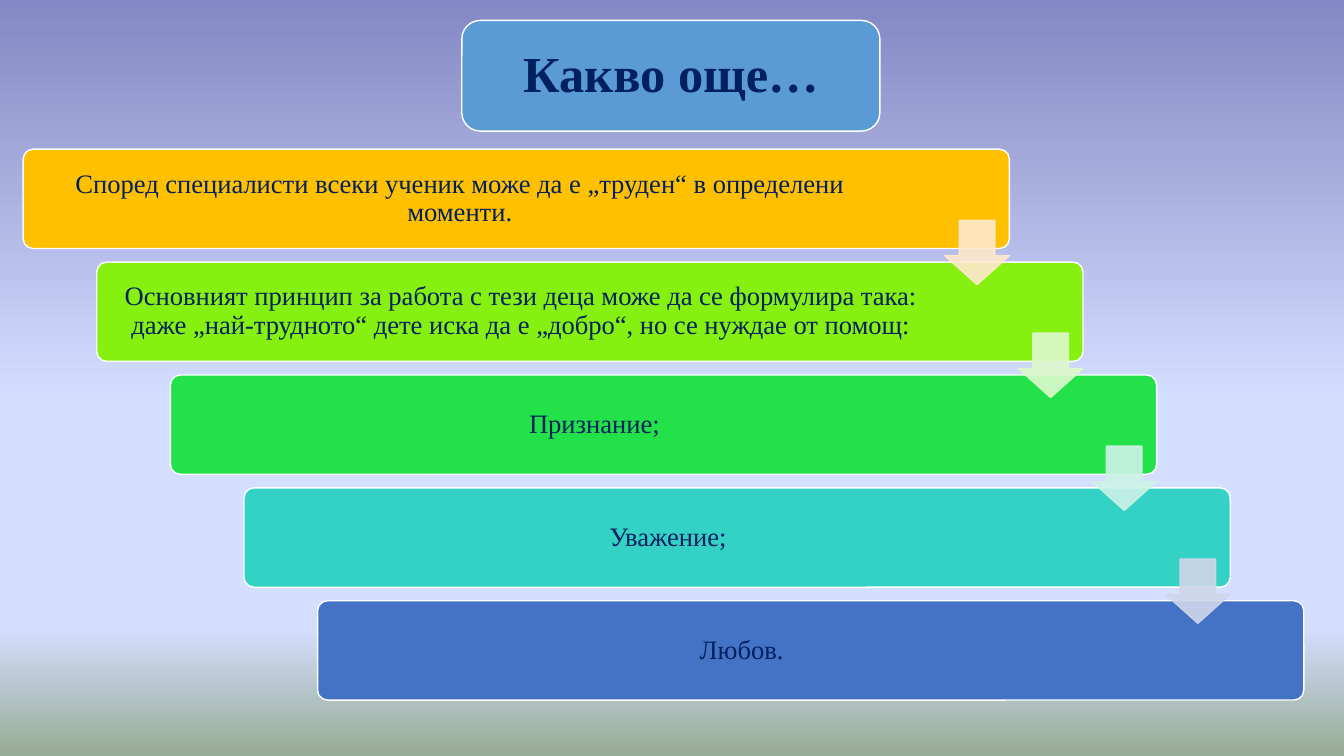
from copy import deepcopy
from dataclasses import dataclass

from lxml.etree import SubElement
from pptx import Presentation
from pptx.dml.color import RGBColor as RGB
from pptx.enum.shapes import MSO_SHAPE as Shape
from pptx.enum.text import MSO_ANCHOR as Anchor, PP_ALIGN as Align
from pptx.oxml.ns import qn
from pptx.util import Inches, Pt


@dataclass(frozen=True)
class Theme:
    font: str = "Times New Roman"
    ink: str = "002060"
    outline: str = "FFFFFF"
    title_fill: str = "5B9BD5"
    title_size: int = 36
    body_size: int = 19
    bars: tuple = ("FFC000", "86F011", "23E148", "33D2C5", "4472C4")
    arrows: tuple = ("FFE8CC", "DDF9CC", "CDF2E7", "CFD6EA")
    arrow_alpha: int = 90
    sky: tuple = ((0, "8488C4"), (53, "D4DEFF"), (83, "D4DEFF"), (100, "96AB94"))


class StairSlide:
    """Grid whose cell is one stair step; the origin is the first bar."""
    LEFT, TOP = 0.23, 1.48
    COL, ROW = 0.73, 1.12

    def __init__(self, slide, theme):
        self.slide, self.theme = slide, theme

    def background(self):
        fill = self.slide.background.fill
        fill.gradient()
        fill.gradient_angle = 270
        stops = fill.gradient_stops
        first = stops[0]._gs
        stop_list = first.getparent()
        for _ in range(len(self.theme.sky) - len(stops)):
            stop_list.append(deepcopy(first))
        for stop, (pos, color) in zip(fill.gradient_stops, self.theme.sky):
            stop.color.rgb = RGB.from_string(color)
            stop.position = pos / 100

    def shape(self, kind, col, row, cols, rows, fill, line, adj=()):
        sp = self.slide.shapes.add_shape(
            kind,
            Inches(self.LEFT + col * self.COL), Inches(self.TOP + row * self.ROW),
            Inches(cols * self.COL), Inches(rows * self.ROW))
        sp.shadow.inherit = False
        sp.fill.solid()
        sp.fill.fore_color.rgb = RGB.from_string(fill)
        sp.line.color.rgb = RGB.from_string(line)
        sp.line.width = Pt(1)
        for i, value in enumerate(adj):
            sp.adjustments[i] = value
        return sp

    def box(self, text, col, row, cols, rows, fill, size, insets, bold=False, adj=()):
        sp = self.shape(Shape.ROUNDED_RECTANGLE, col, row, cols, rows,
                        fill, self.theme.outline, adj)
        tf = sp.text_frame
        left, top, right, bottom = map(Inches, insets)
        frame = {"word_wrap": True, "vertical_anchor": Anchor.MIDDLE,
                 "margin_left": left, "margin_top": top,
                 "margin_right": right, "margin_bottom": bottom}
        p = tf.paragraphs[0]
        r = p.add_run()
        r.text = text
        font = {"name": self.theme.font, "size": Pt(size), "bold": bold}
        para = {"alignment": Align.CENTER, "line_spacing": 0.9}
        for target, values in ((tf, frame), (p, para), (r.font, font)):
            for name, value in values.items():
                setattr(target, name, value)
        r.font.color.rgb = RGB.from_string(self.theme.ink)

    def arrow(self, col, row, cols, rows, color):
        sp = self.shape(Shape.DOWN_ARROW, col, row, cols, rows, color, color,
                        adj=(0.55, 0.45))
        # Fill and outline share the same transparency
        for clr in sp._element.spPr.iter(qn("a:srgbClr")):
            SubElement(clr, qn("a:alpha"), val=str(self.theme.arrow_alpha * 1000))


STEPS = (
    "Според специалисти всеки ученик може да е „труден“ в определени моменти.",
    "Основният принцип за работа с тези деца може да се формулира така: "
    "даже „най-трудното“ дете иска да е „добро“, но се нуждае от помощ:",
    "Признание;",
    "Уважение;",
    "Любов.",
)
BAR_COLS, BAR_ROWS = 13.4, 0.88
ARROW_COLS, ARROW_ROWS, ARROW_DROP = 0.88, 0.57, 0.63


def main():
    prs = Presentation()
    prs.slide_width, prs.slide_height = Inches(13.33), Inches(7.5)
    theme = Theme()
    stairs = StairSlide(prs.slides.add_slide(prs.slide_layouts[6]), theme)
    stairs.background()

    # Title
    stairs.box("Какво още…", 5.96, -1.14, 5.68, 0.98, theme.title_fill,
               theme.title_size, (0.15, 0.07, 0.15, 0.07), bold=True)

    # Bars, each one step right and down; the right inset clears the arrows
    for i, (text, fill) in enumerate(zip(STEPS, theme.bars)):
        right = 1.45 if i else 1.2
        stairs.box(text, i, i, BAR_COLS, BAR_ROWS, fill, theme.body_size,
                   (0.08, 0.08, right, 0.08), adj=(0.1,))

    # Arrows between neighbouring bars
    for i, color in enumerate(theme.arrows):
        stairs.arrow(i + BAR_COLS - ARROW_COLS, i + ARROW_DROP,
                     ARROW_COLS, ARROW_ROWS, color)

    prs.save("out.pptx")


if __name__ == "__main__":
    main()
